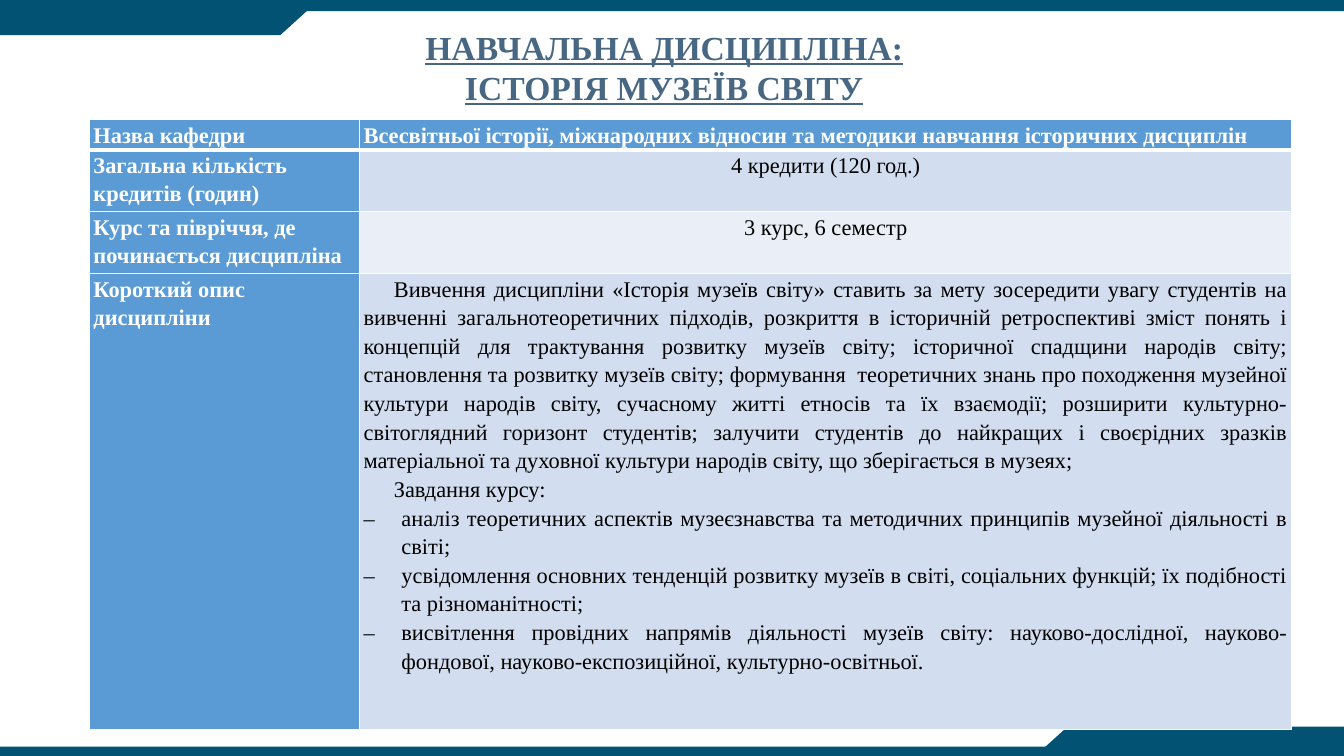
from lxml.etree import SubElement
from pptx import Presentation
from pptx.dml.color import RGBColor
from pptx.enum.shapes import MSO_SHAPE
from pptx.enum.text import MSO_ANCHOR, PP_ALIGN
from pptx.oxml.ns import qn
from pptx.util import Pt

COLORS = {
    "band": "025373",
    "title": "486782",
    "header": "5B9BD5",
    "odd": "D2DEEF",
    "even": "EAEFF7",
    "white": "FFFFFF",
    "black": "000000",
}
FONT = "Times New Roman"
SLIDE_WIDTH, SLIDE_HEIGHT = 960, 540
BAND_HEIGHT = 7.9
CORNER_HEIGHT = 21.6
COLUMN_WIDTHS = [193, 666]
ROW_HEIGHTS = [21.6, 44.2, 44.2, 326]

LABELS = [
    "Назва кафедри",
    "Загальна кількість кредитів (годин)",
    "Курс та півріччя, де починається дисципліна",
    "Короткий опис дисципліни",
]
DEPARTMENT = "Всесвітньої історії, міжнародних відносин та методики навчання історичних дисциплін"
CREDITS = "4 кредити (120 год.)"
SEMESTER = "3 курс, 6 семестр"
DESCRIPTION = [
    "Вивчення дисципліни «Історія музеїв світу» ставить за мету зосередити увагу студентів "
    "на вивченні загальнотеоретичних підходів, розкриття в історичній ретроспективі зміст "
    "понять і концепцій для трактування розвитку музеїв світу; історичної спадщини народів "
    "світу; становлення та розвитку музеїв світу; формування  теоретичних знань про "
    "походження музейної культури народів світу, сучасному житті етносів та їх взаємодії; "
    "розширити культурно-світоглядний горизонт студентів; залучити студентів до найкращих "
    "і своєрідних зразків матеріальної та духовної культури народів світу, що зберігається "
    "в музеях;",
    "Завдання курсу:",
]
TASKS = [
    "аналіз теоретичних аспектів музеєзнавства та методичних принципів музейної діяльності "
    "в світі;",
    "усвідомлення основних тенденцій розвитку музеїв в світі, соціальних функцій; їх "
    "подібності та різноманітності;",
    "висвітлення провідних напрямів діяльності музеїв світу: науково-дослідної, "
    "науково-фондової, науково-експозиційної, культурно-освітньої.",
]


def color(name):
    return RGBColor.from_string(COLORS[name])


def format_font(font, size, color_name, bold):
    font.name = FONT
    font.size = Pt(size)
    font.bold = bold
    font.color.rgb = color(color_name)


def add_band_shape(slide, kind, left, top, width, height):
    shape = slide.shapes.add_shape(kind, Pt(left), Pt(top), Pt(width), Pt(height))
    shape.shadow.inherit = False
    shape.fill.solid()
    shape.fill.fore_color.rgb = color("band")
    shape.line.fill.background()
    return shape


def add_band(slide, top, corner_left, corner_top, triangle_left, rotation):
    add_band_shape(slide, MSO_SHAPE.RECTANGLE, 0, top, SLIDE_WIDTH, BAND_HEIGHT)
    add_band_shape(slide, MSO_SHAPE.RECTANGLE, corner_left, corner_top, 200, CORNER_HEIGHT)
    triangle = add_band_shape(
        slide, MSO_SHAPE.FLOWCHART_MERGE, triangle_left, corner_top, 47.5, CORNER_HEIGHT
    )
    triangle.rotation = rotation


def add_title(slide, left, top, width, height):
    title = slide.shapes.title
    title.left, title.top, title.width, title.height = Pt(left), Pt(top), Pt(width), Pt(height)
    frame = title.text_frame
    frame.text = "НАВЧАЛЬНА ДИСЦИПЛІНА:\nІСТОРІЯ МУЗЕЇВ СВІТУ"
    frame.word_wrap = True
    frame.vertical_anchor = MSO_ANCHOR.MIDDLE
    for paragraph in frame.paragraphs:
        paragraph.alignment = PP_ALIGN.CENTER
        format_font(paragraph.font, 24, "title", True)
        paragraph.font.underline = True


def add_borders(cell, bottom_width):
    properties = cell._tc.get_or_add_tcPr()
    widths = {"a:lnL": 1, "a:lnR": 1, "a:lnT": 1, "a:lnB": bottom_width}
    for tag, width in widths.items():
        line = SubElement(properties, qn(tag), w=str(Pt(width)))
        fill = SubElement(line, qn("a:solidFill"))
        SubElement(fill, qn("a:srgbClr"), val=COLORS["white"])


def set_indent(paragraph, margin, first_line):
    properties = paragraph._p.get_or_add_pPr()
    properties.set("marL", str(Pt(margin)))
    properties.set("indent", str(Pt(first_line)))


def add_dash(paragraph):
    properties = paragraph._p.get_or_add_pPr()
    SubElement(properties, qn("a:buFont"), typeface=FONT)
    SubElement(properties, qn("a:buChar"), char="–")


def fill_cell(cell, texts, fill_name, alignment, bold, bottom_width=1):
    add_borders(cell, bottom_width)
    cell.fill.solid()
    cell.fill.fore_color.rgb = color(fill_name)
    cell.margin_left = cell.margin_right = Pt(3)
    cell.margin_top = cell.margin_bottom = 0
    cell.text = "\n".join(texts)
    for paragraph in cell.text_frame.paragraphs:
        paragraph.alignment = alignment
        paragraph.line_spacing = 1.15
        if paragraph.text in DESCRIPTION:
            set_indent(paragraph, 0, 21.6)
        elif paragraph.text in TASKS:
            set_indent(paragraph, 27, -27)
            add_dash(paragraph)
        format_font(paragraph.font, 16, "white" if bold else "black", bold)


def add_course_table(slide, left, top):
    frame = slide.shapes.add_table(
        len(ROW_HEIGHTS), len(COLUMN_WIDTHS), Pt(left), Pt(top),
        Pt(sum(COLUMN_WIDTHS)), Pt(sum(ROW_HEIGHTS)),
    )
    table = frame.table
    for column, width in zip(table.columns, COLUMN_WIDTHS):
        column.width = Pt(width)
    for row, height in zip(table.rows, ROW_HEIGHTS):
        row.height = Pt(height)
    values = [
        ([DEPARTMENT], "header", PP_ALIGN.LEFT, True),
        ([CREDITS], "odd", PP_ALIGN.CENTER, False),
        ([SEMESTER], "even", PP_ALIGN.CENTER, False),
        (DESCRIPTION + TASKS, "odd", PP_ALIGN.JUSTIFY, False),
    ]
    for index, (label, value) in enumerate(zip(LABELS, values)):
        bottom_width = 3 if index == 0 else 1
        fill_cell(table.cell(index, 0), [label], "header", PP_ALIGN.LEFT, True, bottom_width)
        fill_cell(table.cell(index, 1), *value, bottom_width)


def main():
    presentation = Presentation()
    presentation.slide_width = Pt(SLIDE_WIDTH)
    presentation.slide_height = Pt(SLIDE_HEIGHT)
    slide = presentation.slides.add_slide(presentation.slide_layouts[5])
    add_band(slide, 0, 0, 3.6, 176.4, 0)
    add_band(slide, 533.3, 762.5, 519.1, 738.7, 180)
    add_title(slide, 40.3, 15.1, 868.3, 65.5)
    add_course_table(slide, 63.8, 85.3)
    presentation.save("out.pptx")


if __name__ == "__main__":
    main()
